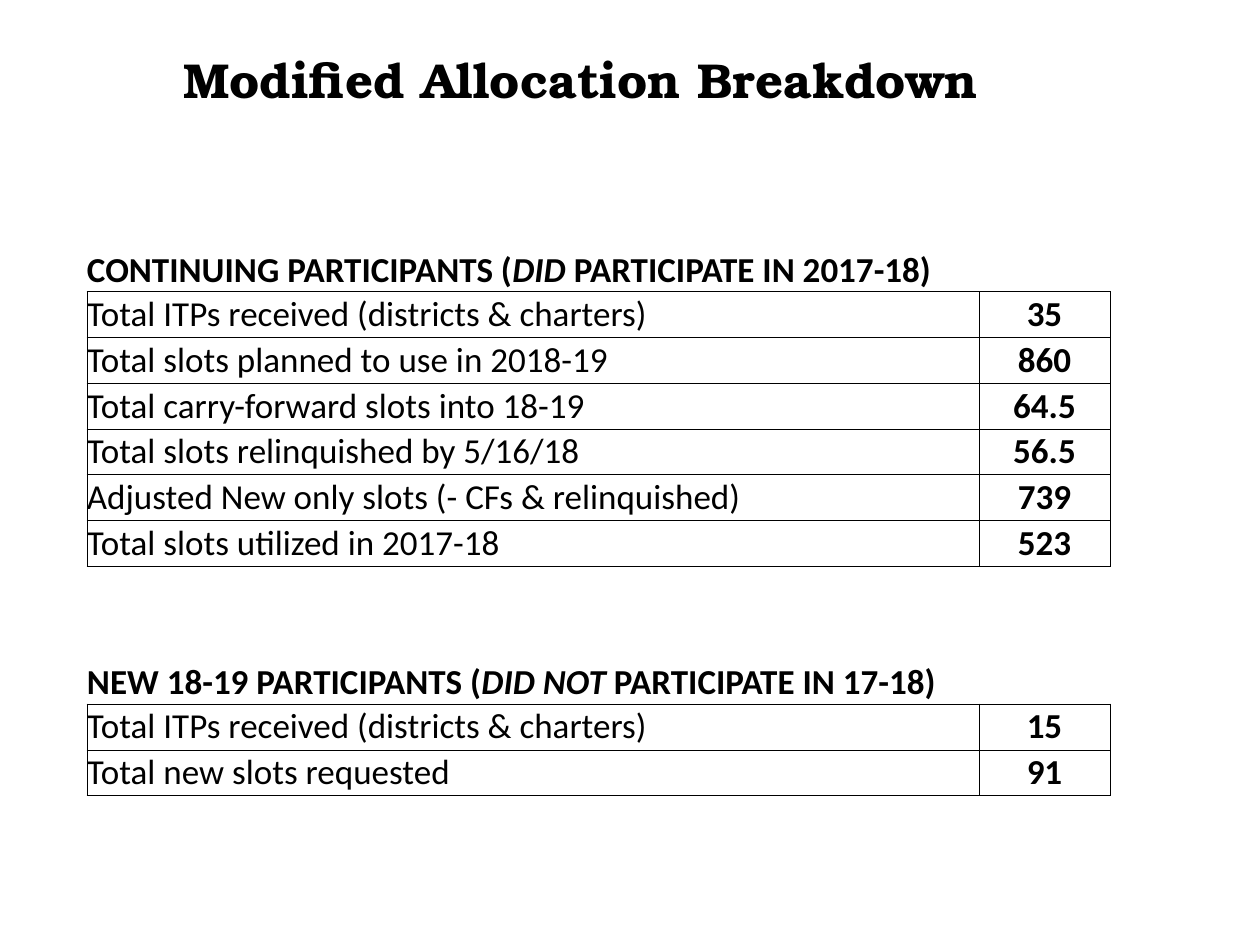
from dataclasses import dataclass

from lxml.etree import SubElement
from pptx import Presentation
from pptx.dml.color import RGBColor
from pptx.enum.text import MSO_ANCHOR, PP_ALIGN
from pptx.oxml.ns import qn
from pptx.util import Inches, Pt


@dataclass(frozen=True)
class Theme:
    ink: str = "000000"
    title_font: str = "TeX Gyre Bonum"
    body_font: str = "Calibri"
    title_size: int = 28
    body_size: int = 20
    border: float = 0.5


HEADING, ENTRY, GAP = "heading", "entry", "gap"

ALLOCATION = [
    (HEADING, ("CONTINUING PARTICIPANTS (", "DID", " PARTICIPATE IN 2017-18)")),
    (ENTRY, ("Total ITPs received (districts & charters)", "35")),
    (ENTRY, ("Total slots planned to use in 2018-19", "860")),
    (ENTRY, ("Total carry-forward slots into 18-19", "64.5")),
    (ENTRY, ("Total slots relinquished by 5/16/18", "56.5")),
    (ENTRY, ("Adjusted New only slots (- CFs & relinquished)", "739")),
    (ENTRY, ("Total slots utilized in 2017-18", "523")),
    (GAP, ()),
    (GAP, ()),
    (HEADING, ("NEW 18-19 PARTICIPANTS (", "DID NOT", " PARTICIPATE IN 17-18)")),
    (ENTRY, ("Total ITPs received (districts & charters)", "15")),
    (ENTRY, ("Total new slots requested", "91")),
]


class SlideBuilder:
    def __init__(self, slide, theme):
        self.slide = slide
        self.theme = theme

    def style(self, run, font, size, bold=False, italic=False):
        run.font.name = font
        run.font.size = Pt(size)
        run.font.bold = bold
        run.font.italic = italic
        run.font.color.rgb = RGBColor.from_string(self.theme.ink)

    def add_title(self, text, left, top, width, height):
        title = self.slide.shapes.title
        title.left, title.top = Inches(left), Inches(top)
        title.width, title.height = Inches(width), Inches(height)
        frame = title.text_frame
        frame.text = text
        frame.margin_left = frame.margin_right = 0
        frame.margin_top = frame.margin_bottom = 0
        frame.vertical_anchor = MSO_ANCHOR.TOP
        frame.paragraphs[0].alignment = PP_ALIGN.CENTER
        self.style(frame.paragraphs[0].runs[0], self.theme.title_font,
                   self.theme.title_size, bold=True)

    def add_borders(self, cell, drawn):
        """Draw the sides named in drawn (from L, R, T, B) and clear the rest."""
        properties = cell._tc.get_or_add_tcPr()
        for side in "LRTB":
            line = SubElement(properties, qn(f"a:ln{side}"),
                              w=str(Pt(self.theme.border)))
            if side in drawn:
                fill = SubElement(line, qn("a:solidFill"))
                SubElement(fill, qn("a:srgbClr"), val=self.theme.ink)
            else:
                SubElement(line, qn("a:noFill"))

    def add_runs(self, cell, texts, **emphasis):
        paragraph = cell.text_frame.paragraphs[0]
        for position, text in enumerate(texts):
            run = paragraph.add_run()
            run.text = text
            self.style(run, self.theme.body_font, self.theme.body_size,
                       italic=position == 1, **emphasis)

    def add_table(self, rows, left, top, column_widths, row_height):
        table = self.slide.shapes.add_table(
            len(rows), len(column_widths), Inches(left), Inches(top),
            Inches(sum(column_widths)), Inches(row_height * len(rows))).table
        table.first_row = table.horz_banding = False
        for column, width in zip(table.columns, column_widths):
            column.width = Inches(width)

        kinds = [kind for kind, _ in rows] + [GAP]
        for index, (kind, texts) in enumerate(rows):
            label, value = table.rows[index].cells
            if kind == ENTRY:
                sides = "LRTB"
            else:
                sides = ("T" if index and kinds[index - 1] == ENTRY else "") + (
                    "B" if kinds[index + 1] == ENTRY else "")
            for cell in (label, value):
                cell.margin_left = cell.margin_right = 0
                cell.margin_top = cell.margin_bottom = 0
                cell.vertical_anchor = (
                    MSO_ANCHOR.BOTTOM if kind == HEADING else MSO_ANCHOR.MIDDLE)
                self.add_borders(cell, sides)
                cell.fill.background()
            if kind == HEADING:
                self.add_runs(label, texts, bold=True)
            elif kind == ENTRY:
                self.add_runs(label, texts[:1])
                self.add_runs(value, texts[1:], bold=True)
                value.text_frame.paragraphs[0].alignment = PP_ALIGN.CENTER


def main():
    presentation = Presentation()
    presentation.slide_width = Inches(10)
    presentation.slide_height = Inches(7.5)
    title_only = presentation.slide_layouts[5]
    builder = SlideBuilder(presentation.slides.add_slide(title_only), Theme())
    builder.add_title("Modified Allocation Breakdown", 0.3, 0.39, 8.62, 0.78)
    builder.add_table(ALLOCATION, 0.69, 1.95, (7.08, 1.04), 4.37 / len(ALLOCATION))
    presentation.save("out.pptx")


if __name__ == "__main__":
    main()
